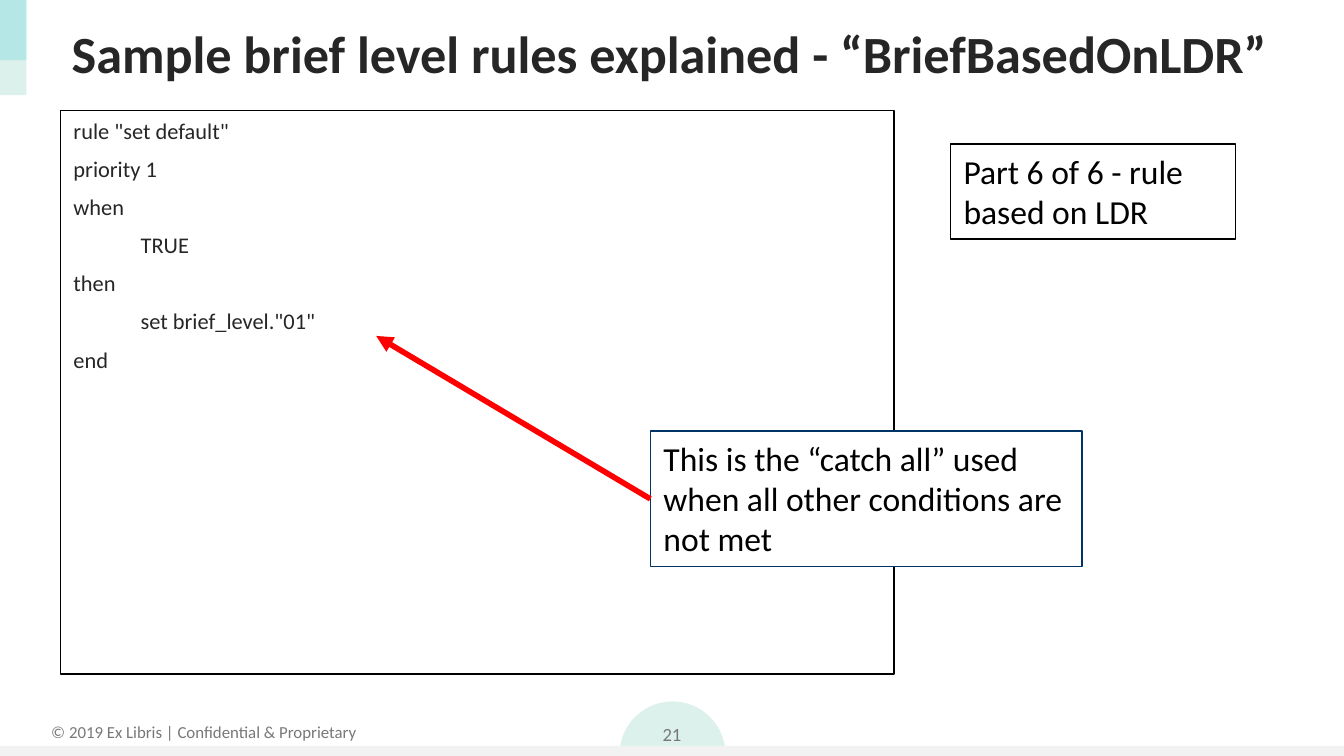
"""Build the slide that explains the catch-all brief level rule."""
from dataclasses import dataclass

import pptx
import pptx.dml.color
import pptx.enum.shapes
import pptx.enum.text
import pptx.oxml
import pptx.oxml.ns
import pptx.util

Cm = pptx.util.Cm
Pt = pptx.util.Pt
Shape = pptx.enum.shapes.MSO_SHAPE
Align = pptx.enum.text.PP_ALIGN
Anchor = pptx.enum.text.MSO_ANCHOR


@dataclass(frozen=True)
class Theme:
    font: str = "Calibri"
    ink: str = "262626"
    black: str = "000000"
    white: str = "FFFFFF"
    muted: str = "787878"
    mint: str = "DCF1EC"
    aqua: str = "50CFDA"
    band: str = "F2F2F2"
    navy: str = "003466"
    red: str = "FF0000"
    title_size: int = 28
    note_size: int = 18
    code_size: int = 12
    number_size: int = 10
    footer_size: int = 9
    outline: float = 0.75
    arrow: int = 3


class SlideBuilder:
    def __init__(self, slide, theme):
        self.slide = slide
        self.theme = theme

    def color(self, value):
        return pptx.dml.color.RGBColor.from_string(value)

    def set_text(self, frame, lines, size, color, bold=False, align=Align.LEFT,
                 anchor=Anchor.TOP, gap=0, wrap=True):
        frame.word_wrap = wrap
        frame.auto_size = pptx.enum.text.MSO_AUTO_SIZE.NONE
        frame.vertical_anchor = anchor
        for index, line in enumerate(lines):
            paragraph = frame.add_paragraph() if index else frame.paragraphs[0]
            paragraph.text = line
            paragraph.alignment = align
            paragraph.space_before = Pt(gap if index else 0)
            paragraph.font.name = self.theme.font
            paragraph.font.size = Pt(size)
            paragraph.font.bold = bold
            paragraph.font.color.rgb = self.color(color)

    def title(self, text, left, top, width, height):
        heading = self.slide.shapes.title
        heading.left, heading.top = Cm(left), Cm(top)
        heading.width, heading.height = Cm(width), Cm(height)
        self.set_text(heading.text_frame, [text], self.theme.title_size,
                      self.theme.ink, bold=True, anchor=Anchor.MIDDLE)

    def label(self, text, left, top, width, height, size, **style):
        box = self.slide.shapes.add_textbox(
            Cm(left), Cm(top), Cm(width), Cm(height))
        self.set_text(box.text_frame, [text], size, self.theme.muted,
                      align=Align.CENTER, **style)

    def shape(self, left, top, width, height, kind=Shape.RECTANGLE,
              fill=None, line=None, opacity=None):
        shape = self.slide.shapes.add_shape(
            kind, Cm(left), Cm(top), Cm(width), Cm(height))
        shape.shadow.inherit = False
        if fill:
            shape.fill.solid()
            shape.fill.fore_color.rgb = self.color(fill)
        else:
            shape.fill.background()
        if line:
            shape.line.color.rgb = self.color(line)
            shape.line.width = Pt(self.theme.outline)
        else:
            shape.line.fill.background()
        if opacity:
            tint = shape._element.spPr.find(".//" + pptx.oxml.ns.qn("a:srgbClr"))
            tint.append(pptx.oxml.parse_xml(
                f'<a:alpha {pptx.oxml.ns.nsdecls("a")} val="{opacity * 1000}"/>'))
        return shape

    def panel(self, lines, left, top, width, height, size, color, line,
              fill=None, gap=0):
        panel = self.shape(left, top, width, height, fill=fill, line=line)
        self.set_text(panel.text_frame, lines, size, color, gap=gap)
        return panel

    def arrow(self, source, side, left, top):
        arrow = self.slide.shapes.add_connector(
            pptx.enum.shapes.MSO_CONNECTOR.STRAIGHT, 0, 0, Cm(left), Cm(top))
        arrow.begin_connect(source, side)
        arrow.line.color.rgb = self.color(self.theme.red)
        arrow.line.width = Pt(self.theme.arrow)
        namespace = pptx.oxml.ns.nsdecls("a")
        outline = arrow._element.spPr.find(pptx.oxml.ns.qn("a:ln"))
        outline.append(pptx.oxml.parse_xml(
            f'<a:tailEnd {namespace} type="triangle"/>'))
        arrow._element.spPr.append(
            pptx.oxml.parse_xml(f"<a:effectLst {namespace}/>"))


def main():
    theme = Theme()
    deck = pptx.Presentation()
    deck.slide_width, deck.slide_height = Cm(25.4), Cm(14.29)
    builder = SlideBuilder(
        deck.slides.add_slide(deck.slide_layouts[5]), theme)

    builder.shape(11.71, 13.26, 2, 2, kind=Shape.OVAL, fill=theme.mint)
    builder.label("© 2019 Ex Libris | Confidential & Proprietary",
                  0.69, 13.51, 6.32, 0.64, theme.footer_size, wrap=False)
    builder.shape(0, 14.1, 25.4, 0.28, fill=theme.band)
    builder.shape(0, 0, 0.5, 1.8, fill=theme.mint)
    builder.shape(0, 0, 0.5, 1.14, fill=theme.aqua, opacity=27)
    builder.label("21", 11.95, 13.37, 1.5, 1.02, theme.number_size,
                  anchor=Anchor.MIDDLE)

    builder.title("Sample brief level rules explained - “BriefBasedOnLDR”",
                  1.1, 0.2, 23.4, 1.6)
    rule = ['rule "set default"', "priority 1", "when", "\tTRUE", "then",
            '\tset brief_level."01"', "end"]
    builder.panel(rule, 1.14, 2.09, 15.76, 10.65, theme.code_size,
                  theme.ink, theme.black, gap=6)
    builder.panel(["Part 6 of 6 - rule based on LDR"], 17.96, 2.72, 5.39, 1.8,
                  theme.note_size, theme.black, theme.black)
    catch_all = builder.panel(
        ["This is the “catch all” used when all other conditions are not met"],
        12.29, 8.15, 8.16, 2.56, theme.note_size, theme.black, theme.navy,
        fill=theme.white)
    builder.arrow(catch_all, 1, 7.11, 6.35)

    deck.save("out.pptx")


if __name__ == "__main__":
    main()
